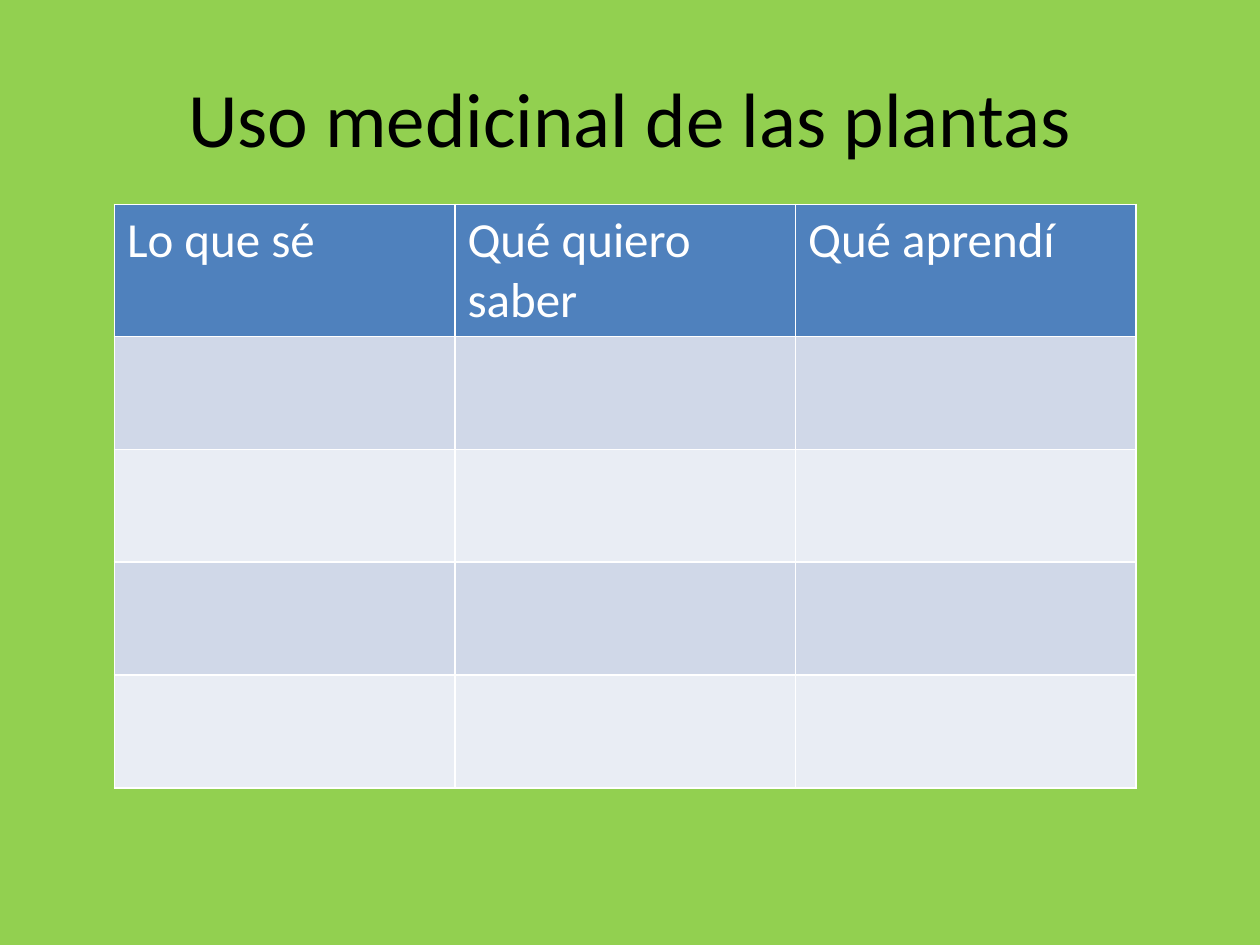
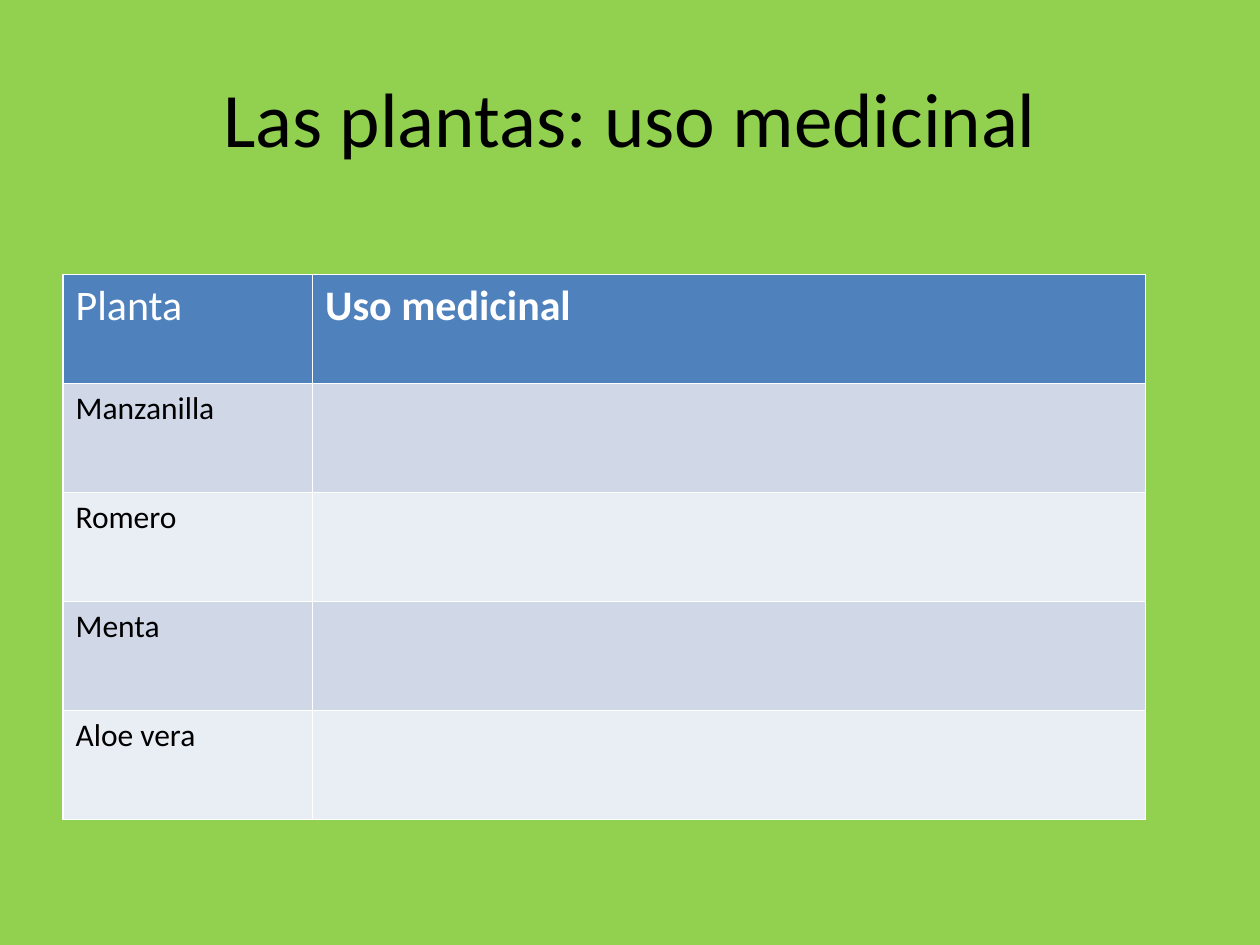
"""Build two slides on the medicinal use of plants."""
from pptx import Presentation
from pptx.dml.color import RGBColor
from pptx.enum.text import MSO_ANCHOR, PP_ALIGN
from pptx.util import Pt

COLORS = {"bg": "92D050", "header": "4F81BD", "odd": "D0D8E8",
          "even": "E9EDF4", "white": "FFFFFF", "black": "000000"}
FONT = "Calibri"
BODY_SIZE = 18

SLIDES = [
    {"title": "Uso medicinal de las plantas",
     "left": 65.4, "top": 116.8, "cols": [194.6] * 3, "row": 64.5,
     "header_row": 75.5, "header_size": 28, "bold_cols": [],
     "rows": [["Lo que sé", "Qué quiero saber", "Qué aprendí"]] + [[""] * 3] * 4},
    {"title": "Las plantas: uso medicinal",
     "left": 36, "top": 156.8, "cols": [142.6, 476], "row": 62.3,
     "header_row": 62.3, "header_size": 24, "bold_cols": [1],
     "rows": [["Planta", "Uso medicinal"], ["Manzanilla", ""], ["Romero", ""],
              ["Menta", ""], ["Aloe vera", ""]]},
]


def color(name):
    return RGBColor.from_string(COLORS[name])


def write(p, text, ink, formats):
    r = p.add_run()
    r.text = text
    r.font.color.rgb = color(ink)
    for name, value in formats.items():
        setattr(r.font, name, value)


prs = Presentation()
prs.slide_width, prs.slide_height = Pt(720), Pt(540)

for data in SLIDES:
    s = prs.slides.add_slide(prs.slide_layouts[6])
    s.background.fill.solid()
    s.background.fill.fore_color.rgb = color("bg")

    tf = s.shapes.add_textbox(Pt(36), Pt(21.6), Pt(648), Pt(90)).text_frame
    tf.word_wrap = True
    tf.vertical_anchor = MSO_ANCHOR.MIDDLE
    p = tf.paragraphs[0]
    p.alignment = PP_ALIGN.CENTER
    write(p, data["title"], "black", {"name": FONT, "size": Pt(44)})

    rows, cols = data["rows"], data["cols"]
    heights = [data["header_row"]] + [data["row"]] * (len(rows) - 1)
    table = s.shapes.add_table(len(rows), len(cols), Pt(data["left"]), Pt(data["top"]),
                               Pt(sum(cols)), Pt(sum(heights))).table
    for column, width in zip(table.columns, cols):
        column.width = Pt(width)
    for i, (texts, height) in enumerate(zip(rows, heights)):
        table.rows[i].height = Pt(height)
        header = i == 0
        fill = "header" if header else "odd" if i % 2 else "even"
        for j, text in enumerate(texts):
            cell = table.cell(i, j)
            cell.fill.solid()
            cell.fill.fore_color.rgb = color(fill)
            if text:
                write(cell.text_frame.paragraphs[0], text, "white" if header else "black",
                      {"name": FONT, "bold": header and j in data["bold_cols"],
                       "size": Pt(data["header_size"] if header else BODY_SIZE)})

prs.save("out.pptx")
